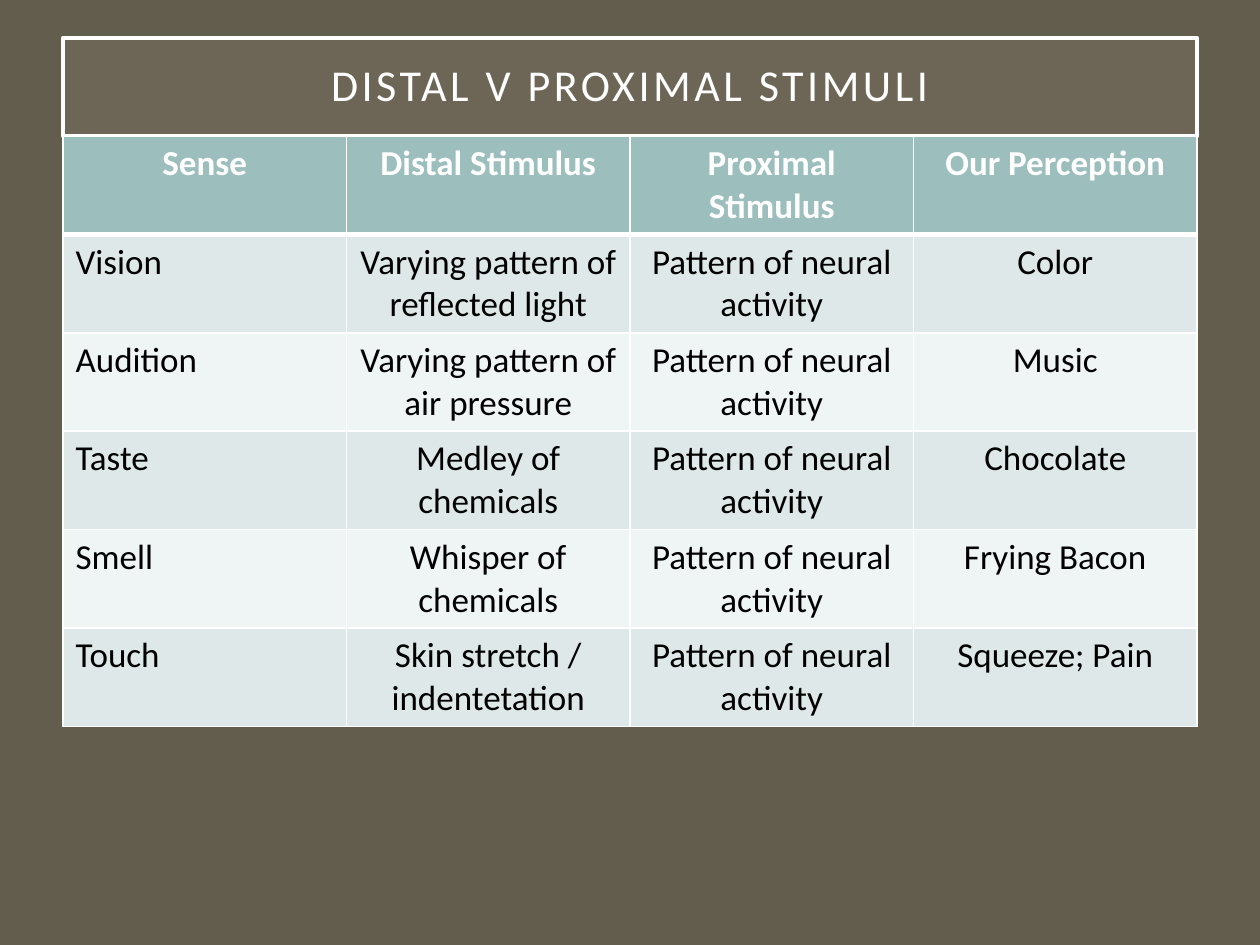
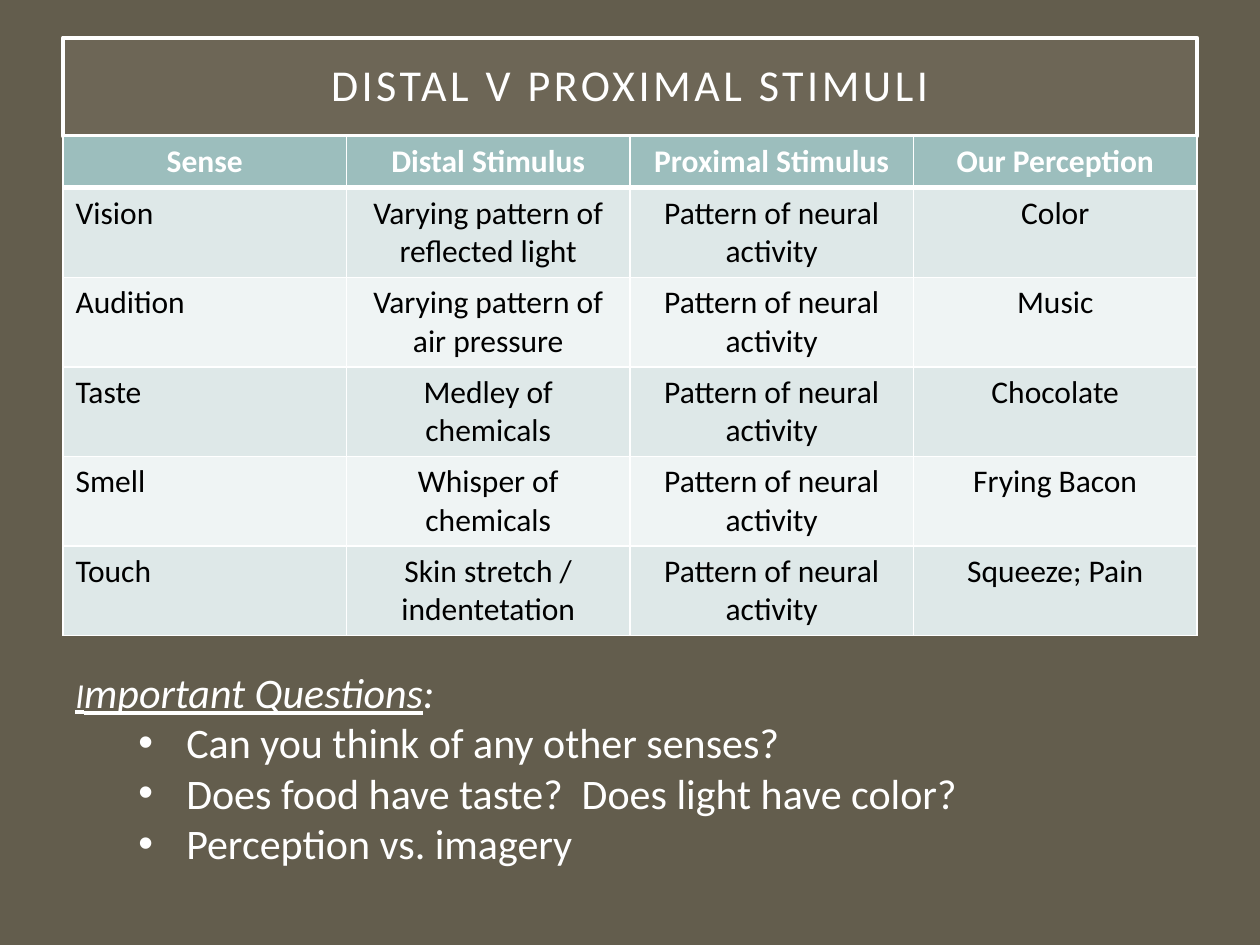
from lxml import etree
from pptx import Presentation
from pptx.dml.color import RGBColor
from pptx.enum.shapes import MSO_SHAPE
from pptx.enum.text import MSO_ANCHOR, PP_ALIGN
from pptx.oxml.ns import qn
from pptx.util import Inches, Pt

RECTANGLE = MSO_SHAPE.RECTANGLE
MIDDLE = MSO_ANCHOR.MIDDLE
LEFT, CENTER = PP_ALIGN.LEFT, PP_ALIGN.CENTER

FONT = "Calibri"
COLORS = {
    "background": "635D4D",
    "title": "A7A08E",
    "header": "9CBEBD",
    "odd_row": "DEE8E8",
    "even_row": "EFF4F4",
    "light": "FFFFFF",
    "dark": "000000",
}

MARGIN, CONTENT_WIDTH = 0.5, 9
TITLE_TOP, TITLE_HEIGHT = 0.3, 0.78
TABLE_TOP = TITLE_TOP + TITLE_HEIGHT

TITLE = "DISTAL V PROXIMAL STIMULI"
HEADINGS = ["Sense", "Distal Stimulus", "Proximal Stimulus", "Our Perception"]
PROXIMAL = "Pattern of neural activity"
SENSES = [
    ("Vision", "Varying pattern of reflected light", "Color"),
    ("Audition", "Varying pattern of air pressure", "Music"),
    ("Taste", "Medley of chemicals", "Chocolate"),
    ("Smell", "Whisper of chemicals", "Frying Bacon"),
    ("Touch", "Skin stretch / indentetation", "Squeeze; Pain"),
]
QUESTIONS = [
    "Can you think of any other senses?",
    "Does food have taste?  Does light have color?",
    "Perception vs. imagery",
]


def color(name):
    return RGBColor.from_string(COLORS[name])


def paint(fill, name):
    fill.solid()
    fill.fore_color.rgb = color(name)


def add_span(para, text, size=24, ink="light", bold=False, italic=False,
             underline=False, spacing=None):
    span = para.add_run()
    span.text = text
    font = span.font
    font.name, font.size = FONT, Pt(size)
    font.bold, font.italic, font.underline = bold, italic, underline
    font.color.rgb = color(ink)
    if spacing:
        span._r.get_or_add_rPr().set("spc", str(spacing * 100))


def add_bullet(para, left, hanging):
    properties = para._p.get_or_add_pPr()
    properties.set("marL", str(Inches(left)))
    properties.set("indent", str(-Inches(hanging)))
    etree.SubElement(properties, qn("a:buFont"), typeface="Arial")
    etree.SubElement(properties, qn("a:buChar"), char="•")


def set_borders(cell, top, bottom):
    """Give a cell white edges, 1 pt at the sides."""
    properties = cell._tc.get_or_add_tcPr()
    for side, width in zip("LRTB", (1, 1, top, bottom)):
        line = etree.SubElement(properties, qn(f"a:ln{side}"), w=str(Pt(width)))
        fill = etree.SubElement(line, qn("a:solidFill"))
        etree.SubElement(fill, qn("a:srgbClr"), val=COLORS["light"])


def add_title(page):
    box = page.shapes.add_shape(
        RECTANGLE, Inches(MARGIN), Inches(TITLE_TOP),
        Inches(CONTENT_WIDTH), Inches(TITLE_HEIGHT))
    box.shadow.inherit = False
    paint(box.fill, "title")
    tint = box.fill._xPr.find(qn("a:solidFill"))[0]
    etree.SubElement(tint, qn("a:alpha"), val="15000")
    box.line.color.rgb = color("light")
    box.line.width = Pt(2.5)

    frame = box.text_frame
    frame.word_wrap = True
    frame.vertical_anchor = MIDDLE
    frame.margin_left = frame.margin_right = Inches(0.2)
    frame.margin_top = frame.margin_bottom = Inches(0.2)
    para = frame.paragraphs[0]
    para.alignment = CENTER
    para.line_spacing = 0.9
    add_span(para, TITLE, size=25.2, spacing=2)


def add_senses_table(page, size, header_height, row_height):
    rows = [HEADINGS] + [(sense, distal, PROXIMAL, perception)
                         for sense, distal, perception in SENSES]
    height = header_height + row_height * len(SENSES)
    table = page.shapes.add_table(
        len(rows), len(HEADINGS), Inches(MARGIN), Inches(TABLE_TOP),
        Inches(CONTENT_WIDTH), Inches(height)).table

    for r, texts in enumerate(rows):
        is_header = r == 0
        table.rows[r].height = Inches(header_height if is_header else row_height)
        band = "header" if is_header else "odd_row" if r % 2 else "even_row"
        for c, text in enumerate(texts):
            cell = table.cell(r, c)
            set_borders(cell, top=3 if r == 1 else 1, bottom=3 if is_header else 1)
            paint(cell.fill, band)
            para = cell.text_frame.paragraphs[0]
            para.alignment = CENTER if is_header or c else LEFT
            add_span(para, text, size=size, bold=is_header,
                     ink="light" if is_header else "dark")


def add_questions(page):
    box = page.shapes.add_textbox(
        Inches(MARGIN), Inches(5.24), Inches(7.95), Inches(2.02))
    frame = box.text_frame
    frame.word_wrap = True
    heading = frame.paragraphs[0]
    add_span(heading, "I", size=20, italic=True, underline=True)
    add_span(heading, "mportant Questions", italic=True, underline=True)
    add_span(heading, ":", italic=True)
    for question in QUESTIONS:
        para = frame.add_paragraph()
        para.level = 1
        add_bullet(para, left=0.88, hanging=0.38)
        add_span(para, question)


def add_page(deck):
    page = deck.slides.add_slide(deck.slide_layouts[6])
    paint(page.background.fill, "background")
    add_title(page)
    return page


def main():
    deck = Presentation()
    deck.slide_width, deck.slide_height = Inches(10), Inches(7.5)

    # Slide 1: the table alone
    page = add_page(deck)
    add_senses_table(page, size=20, header_height=0.78, row_height=0.78)

    # Slide 2: a smaller table, with questions below
    page = add_page(deck)
    add_senses_table(page, size=18, header_height=0.41, row_height=0.71)
    add_questions(page)

    deck.save("out.pptx")


if __name__ == "__main__":
    main()
